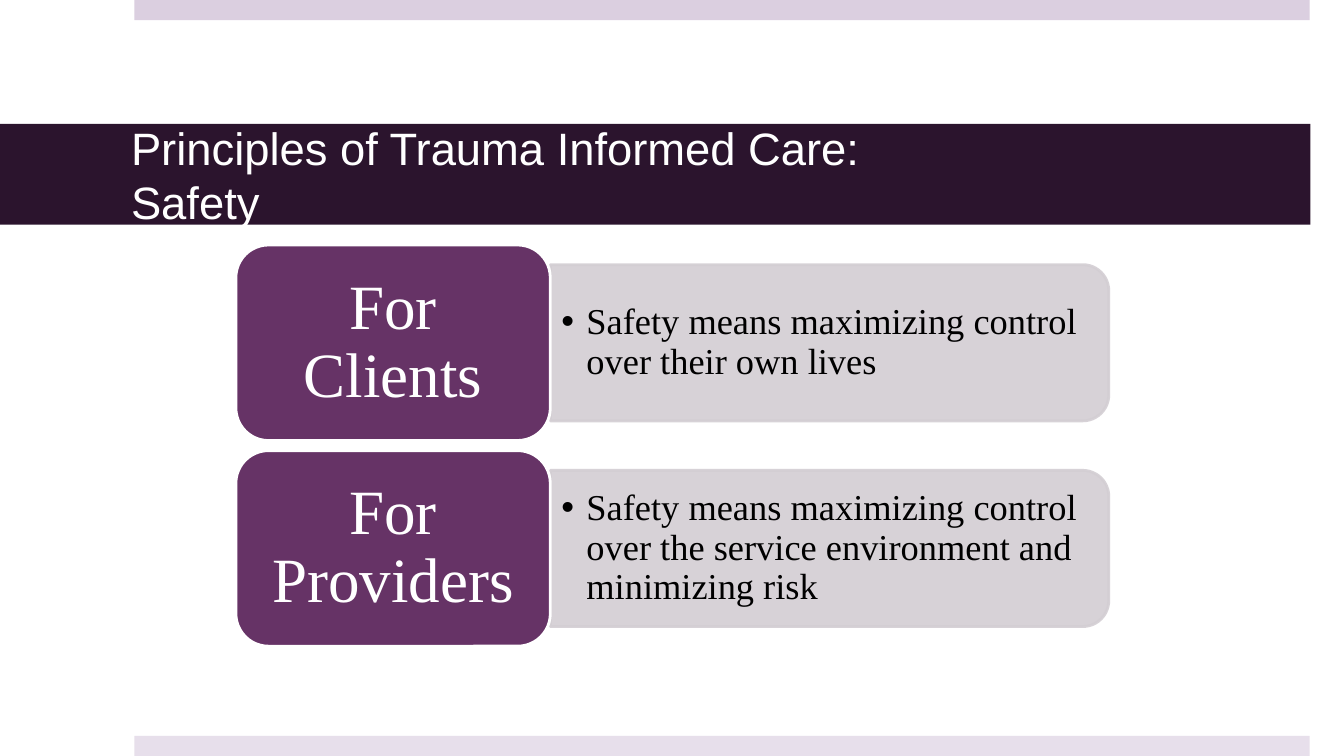
from lxml.etree import SubElement
from pptx import Presentation
from pptx.dml.color import RGBColor
from pptx.enum.shapes import MSO_SHAPE
from pptx.enum.text import MSO_ANCHOR, MSO_AUTO_SIZE, PP_ALIGN
from pptx.oxml.ns import qn
from pptx.util import Pt

TITLE = ["Principles of Trauma Informed Care:", "Safety"]
GROUPS = [
    ("For Clients", "Safety means maximizing control over their own lives"),
    ("For Providers", "Safety means maximizing control over the service "
                      "environment and minimizing risk"),
]
COLORS = {
    "top_strip": "DBCFE0", "bottom_strip": "E7DFEB", "band": "2B142D",
    "panel": "D3CED3", "label": "663366", "white": "FFFFFF", "black": "000000",
}
SLIDE_W, SLIDE_H = 960, 540
STRIP_X, STRIP_W, STRIP_H = 96, 839.5, 14.4
LABEL_X, LABEL_Y, LABEL_W, LABEL_H = 168.5, 175, 224.6, 139.7
PITCH = 146.9
PANEL_W, PANEL_H = 398.9, 111.6
LIST_W, LIST_H = 393.1, 100.8
INDENT = 18


def rgb(name):
    return RGBColor.from_string(COLORS[name])


def place(sp, x, y, w, h):
    sp.left, sp.top, sp.width, sp.height = Pt(x), Pt(y), Pt(w), Pt(h)


def add_shape(s, kind, box, fill, line=None):
    sp = s.shapes.add_shape(kind, *(Pt(v) for v in box))
    sp.shadow.inherit = False
    sp.fill.solid()
    sp.fill.fore_color.rgb = rgb(fill)
    if line:
        sp.line.color.rgb = rgb(line)
        sp.line.width = Pt(2)
    else:
        sp.line.fill.background()
    return sp


def setup_frame(sp, insets):
    tf = sp.text_frame
    tf.word_wrap = True
    tf.auto_size = MSO_AUTO_SIZE.NONE
    tf.vertical_anchor = MSO_ANCHOR.MIDDLE
    tf.margin_left, tf.margin_top, tf.margin_right, tf.margin_bottom = map(Pt, insets)
    return tf.paragraphs[0]


def add_run(p, text, size, font, color):
    r = p.add_run()
    r.text = text
    r.font.size, r.font.name = Pt(size), font
    r.font.color.rgb = rgb(color)


def set_spacing(p, align):
    p.alignment = align
    p.line_spacing = 0.9
    p.space_before = p.space_after = Pt(0)


def set_bullet(p):
    pPr = p._p.get_or_add_pPr()
    pPr.set("marL", str(Pt(INDENT)))
    pPr.set("indent", str(-Pt(INDENT)))
    SubElement(pPr, qn("a:buChar")).set("char", "•")


def set_alpha(fill):
    color = fill.find(qn("a:solidFill")).find(qn("a:srgbClr"))
    SubElement(color, qn("a:alpha")).set("val", "90000")


def add_title(s):
    title = s.shapes.title
    place(title, 0, 88.5, 936, 72)
    title.fill.solid()
    title.fill.fore_color.rgb = rgb("band")
    p = setup_frame(title, (93.6, 3.6, 21.6, 3.6))
    p.alignment = PP_ALIGN.LEFT
    for i, text in enumerate(TITLE):
        if i:
            p.add_line_break()
        add_run(p, text, 32.4, "Arial", "white")


def add_group(s, body, i, label_text, point):
    top = LABEL_Y + i * PITCH
    middle = top + LABEL_H / 2
    panel_x = LABEL_X + LABEL_W
    center_x = panel_x + PANEL_W / 2
    panel = add_shape(s, MSO_SHAPE.ROUND_2_SAME_RECTANGLE,
                      (center_x - PANEL_H / 2, middle - PANEL_W / 2, PANEL_H, PANEL_W),
                      "panel", "panel")
    panel.rotation = 90
    spPr = panel._element.spPr
    set_alpha(spPr)
    set_alpha(spPr.find(qn("a:ln")))

    place(body, panel_x, middle - LIST_H / 2, LIST_W, LIST_H)
    s.shapes._spTree.append(body._element)
    p = setup_frame(body, (7.8, 3.9, 7.8, 3.9))
    set_spacing(p, PP_ALIGN.LEFT)
    set_bullet(p)
    add_run(p, point, 26, "Times New Roman", "black")

    label = add_shape(s, MSO_SHAPE.ROUNDED_RECTANGLE,
                      (LABEL_X, top, LABEL_W, LABEL_H), "label", "white")
    p = setup_frame(label, (13.5, 6.75, 13.5, 6.75))
    set_spacing(p, PP_ALIGN.CENTER)
    add_run(p, label_text, 45, "Times New Roman", "white")


def main():
    prs = Presentation()
    prs.slide_width, prs.slide_height = Pt(SLIDE_W), Pt(SLIDE_H)
    s = prs.slides.add_slide(prs.slide_layouts[3])
    bodies = [s.placeholders[1], s.placeholders[2]]
    for y, fill in ((0, "top_strip"), (SLIDE_H - STRIP_H, "bottom_strip")):
        add_shape(s, MSO_SHAPE.RECTANGLE, (STRIP_X, y, STRIP_W, STRIP_H), fill)
    add_title(s)
    for i, (body, (label_text, point)) in enumerate(zip(bodies, GROUPS)):
        add_group(s, body, i, label_text, point)
    prs.save("out.pptx")


if __name__ == "__main__":
    main()
